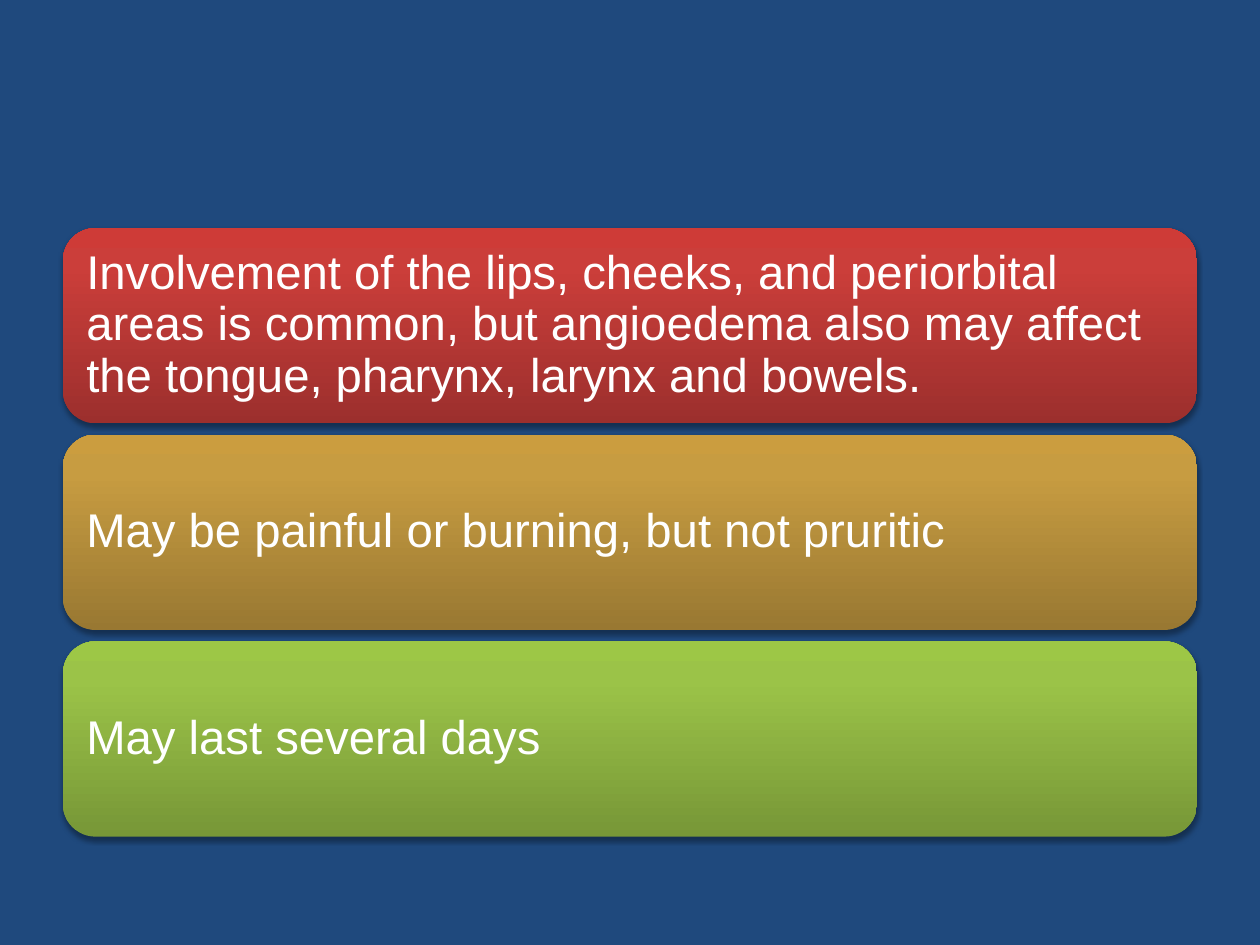
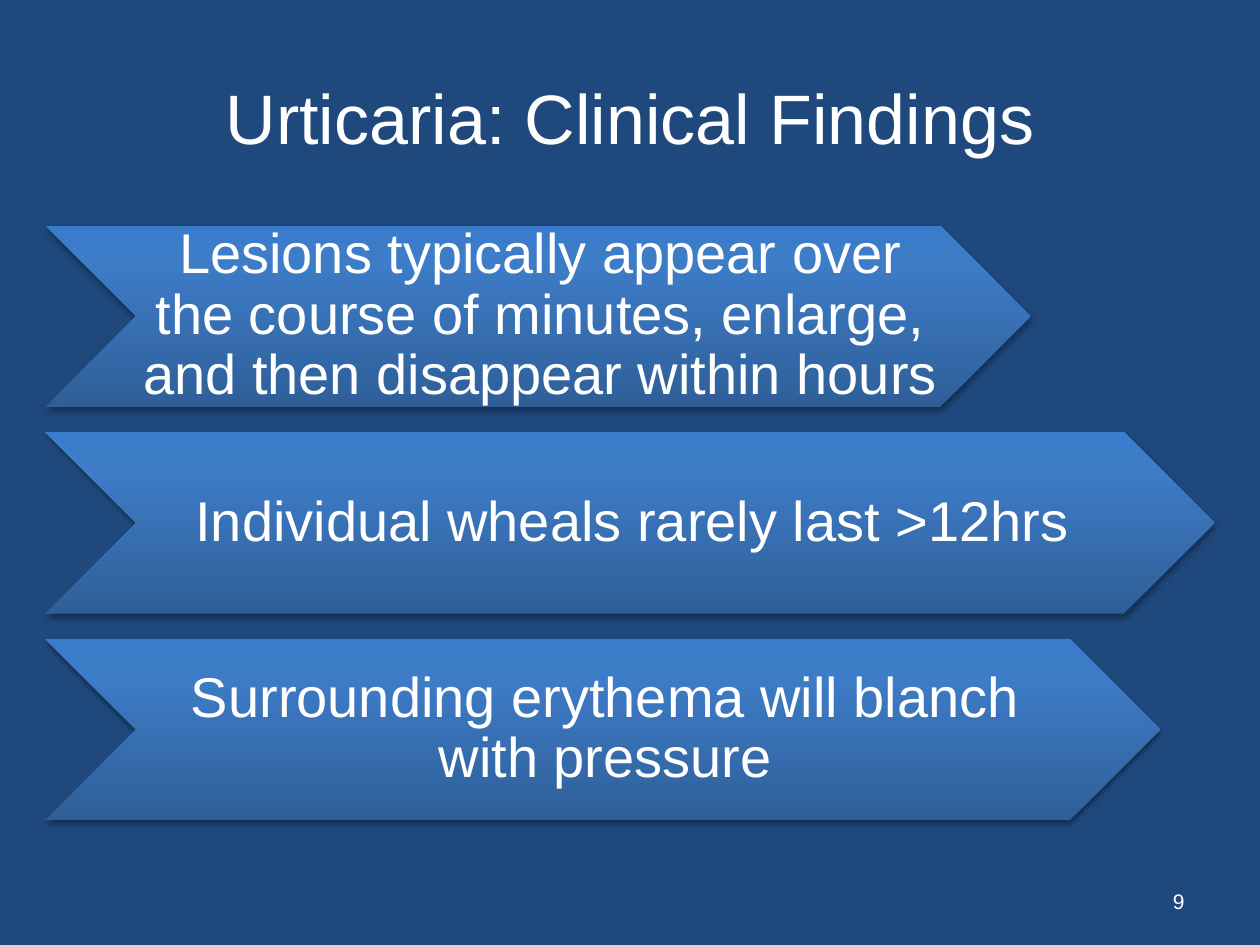
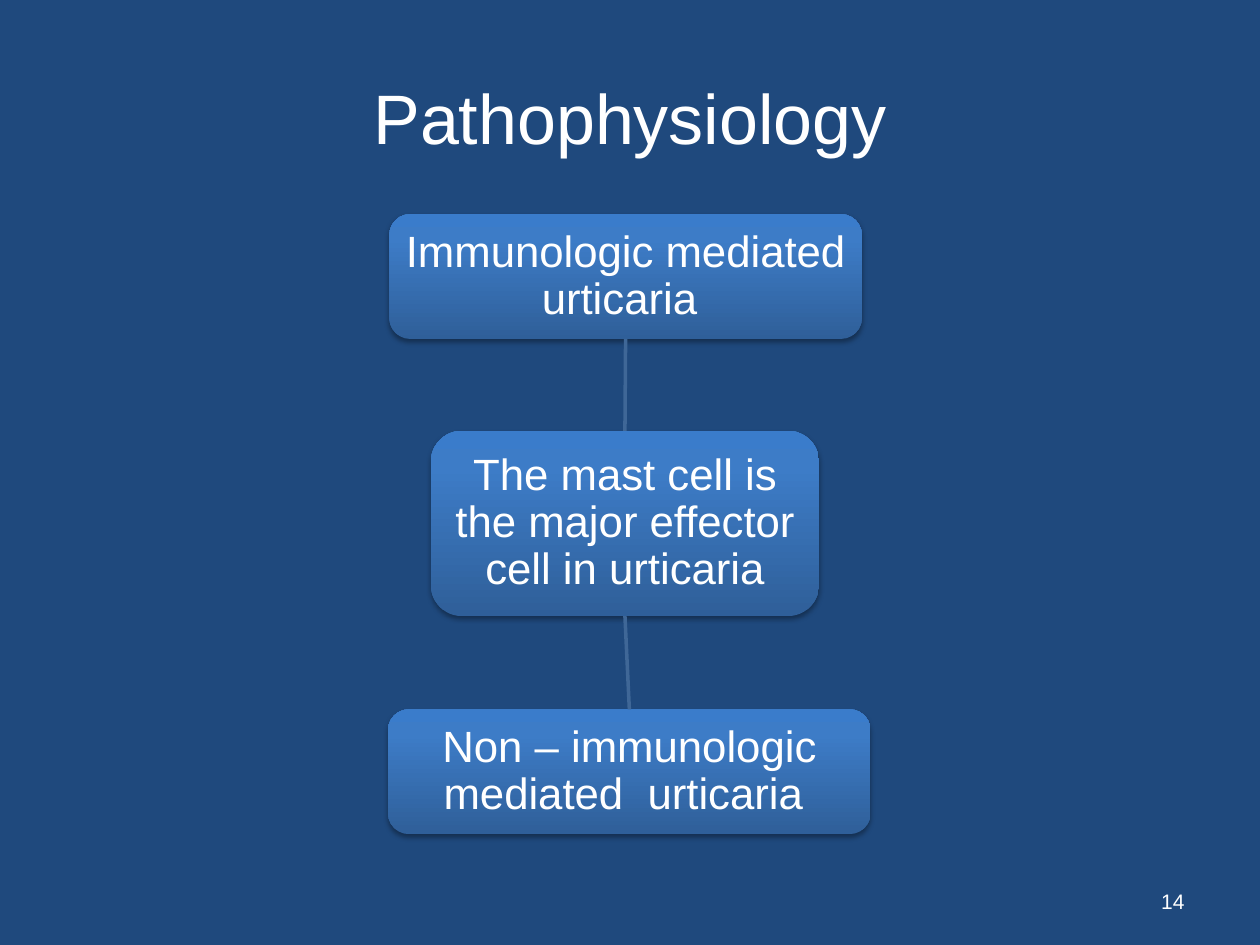
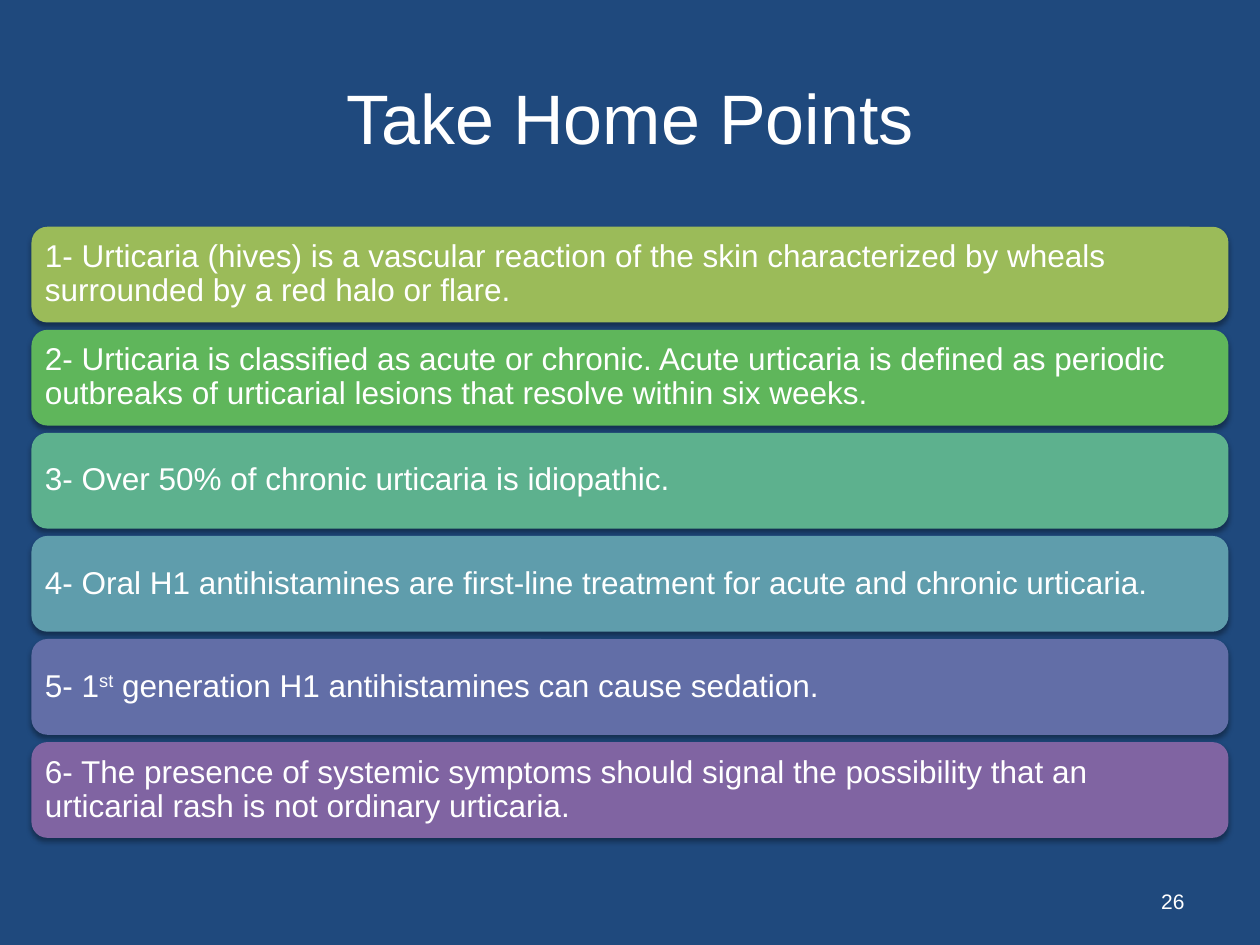
from dataclasses import dataclass

from pptx import Presentation
from pptx.dml.color import RGBColor as RGB
from pptx.enum.shapes import MSO_CONNECTOR as LINE, MSO_SHAPE as SHAPE
from pptx.enum.text import MSO_ANCHOR as ANCHOR, PP_ALIGN as ALIGN
from pptx.oxml import parse_xml
from pptx.oxml.ns import nsdecls, qn
from pptx.util import Inches, Pt


@dataclass(frozen=True)
class Theme:
    font: str = "Arial"
    back: str = "1F497D"
    text: str = "FFFFFF"
    link: str = "3F6797"
    # Gradients run from the bottom edge to the top
    red: tuple = ("9C2F2D", "CB3E3A", "CE3B37")
    gold: tuple = ("997832", "C79C41", "CB9D3F")
    green: tuple = ("779737", "9BC348", "9DC746")
    blue: tuple = ("2F5F99", "3D7CC7", "3A7CCB")
    flat: tuple = ("9BBB59", "5FB65B", "5DB18E", "5F9DAC", "626EA7", "8064A2")
    title: int = 40
    arrow: int = 32
    panel: int = 27
    node: int = 25
    point: int = 18
    num: int = 12


theme = Theme()
prs = Presentation()
prs.slide_width, prs.slide_height = Inches(10), Inches(7.5)

# Grid: 10 columns by 7.5 rows
col, row = prs.slide_width / 10, prs.slide_height / 7.5


def write(frame, text, size, align, space=1.0):
    """Fill a text frame; a part between two ^ marks is superscript."""
    frame.word_wrap = True
    frame.vertical_anchor = ANCHOR.MIDDLE
    para = frame.paragraphs[0]
    para.alignment, para.line_spacing = align, space
    for i, part in enumerate(text.split("^")):
        run = para.add_run()
        run.text = part
        font = run.font
        font.name, font.size = theme.font, Pt(size)
        font.color.rgb = RGB.from_string(theme.text)
        if i % 2:
            run._r.get_or_add_rPr().set("baseline", "30000")


def card(slide, kind, at, fill, text, size, align, pads):
    """Add a shadowed shape with text; a tuple fill is a gradient."""
    x, y, w, h = at
    shape = slide.shapes.add_shape(
        kind, int(x * col), int(y * row), int(w * col), int(h * row))
    shape.line.fill.background()
    shape.shadow.inherit = False
    props = shape._element.spPr
    if isinstance(fill, tuple):
        stops = "".join(
            f'<a:gs pos="{pos}000"><a:srgbClr val="{tone}"/></a:gs>'
            for pos, tone in zip((0, 80, 100), fill))
        props.find(qn("a:ln")).addprevious(parse_xml(
            f'<a:gradFill {nsdecls("a")} rotWithShape="1"><a:gsLst>{stops}'
            '</a:gsLst><a:lin ang="16200000" scaled="0"/></a:gradFill>'))
    else:
        shape.fill.solid()
        shape.fill.fore_color.rgb = RGB.from_string(fill)
    props.find(qn("a:effectLst")).append(parse_xml(
        f'<a:outerShdw {nsdecls("a")} blurRad="{Pt(3.1)}" dist="{Pt(1.8)}" '
        'dir="5400000" rotWithShape="0"><a:srgbClr val="000000">'
        '<a:alpha val="35000"/></a:srgbClr></a:outerShdw>'))
    frame = shape.text_frame
    (frame.margin_left, frame.margin_top,
     frame.margin_right, frame.margin_bottom) = [int(p * col) for p in pads]
    write(frame, text, size, align, 0.9)
    return shape


# Shared background, titles and page numbers
ground = prs.slide_master.background.fill
ground.solid()
ground.fore_color.rgb = RGB.from_string(theme.back)

only, blank = prs.slide_layouts[5], prs.slide_layouts[6]
signs = prs.slides.add_slide(blank)
pages = []
for name, num in (("Urticaria: Clinical Findings", "9"),
                  ("Pathophysiology", "14"),
                  ("Take Home Points", "26")):
    page = prs.slides.add_slide(only)
    head = page.shapes.title
    head.left, head.top = int(0.5 * col), int(0.3 * row)
    head.width, head.height = int(9 * col), int(1.25 * row)
    write(head.text_frame, name, theme.title, ALIGN.CENTER)
    foot = page.shapes.add_textbox(
        int(7.17 * col), int(6.95 * row), int(2.33 * col), int(0.4 * row))
    write(foot.text_frame, num, theme.num, ALIGN.RIGHT)
    pages.append(page)
finds, paths, points = pages

# Slide 1: three panels
panels = (
    (theme.red, "Involvement of the lips, cheeks, and periorbital areas is "
     "common, but angioedema also may affect the tongue, pharynx, larynx "
     "and bowels."),
    (theme.gold, "May be painful or burning, but not pruritic"),
    (theme.green, "May last several days"),
)
for i, (fill, text) in enumerate(panels):
    card(signs, SHAPE.ROUNDED_RECTANGLE, (0.5, 1.81 + i * 1.64, 9, 1.55),
         fill, text, theme.panel, ALIGN.LEFT, (0.11,) * 4)

# Slide 2: chevrons of different lengths
arrows = (
    (7.82, "Lesions typically appear over the course of minutes, enlarge, "
     "and then disappear within hours"),
    (9.28, "Individual wheals rarely last >12hrs"),
    (8.85, "Surrounding erythema will blanch with pressure"),
)
for i, (wide, text) in enumerate(arrows):
    card(finds, SHAPE.CHEVRON, (0.36, 1.79 + i * 1.64, wide, 1.44),
         theme.blue, text, theme.arrow, ALIGN.CENTER, (0.04, 0.02, 0, 0.02))

# Slide 3: the mast cell joined to both kinds of urticaria
nodes = (
    ((3.42, 3.42, 3.08, 1.47),
     "The mast cell is the major effector cell in urticaria"),
    ((3.09, 1.7, 3.75, 0.99), "Immunologic mediated urticaria "),
    ((3.08, 5.63, 3.83, 0.99), "Non – immunologic mediated  urticaria "),
)
core, above, below = [
    card(paths, SHAPE.ROUNDED_RECTANGLE, at, theme.blue, text, theme.node,
         ALIGN.CENTER, (0.07,) * 4) for at, text in nodes]
for side, node, end in ((0, above, 2), (2, below, 0)):
    link = paths.shapes.add_connector(LINE.STRAIGHT, 0, 0, 0, 0)
    link.begin_connect(core, side)
    link.end_connect(node, end)
    link.line.color.rgb = RGB.from_string(theme.link)
    link.line.width = Pt(2)
    link._element.spPr.append(parse_xml(f'<a:effectLst {nsdecls("a")}/>'))

# Slide 4: numbered points
notes = (
    "Urticaria (hives) is a vascular reaction of the skin characterized by "
    "wheals surrounded by a red halo or flare.",
    "Urticaria is classified as acute or chronic. Acute urticaria is defined "
    "as periodic outbreaks of urticarial lesions that resolve within six "
    "weeks.",
    "Over 50% of chronic urticaria is idiopathic.",
    "Oral H1 antihistamines are first-line treatment for acute and chronic "
    "urticaria.",
    "1^st^ generation H1 antihistamines can cause sedation.",
    "The presence of systemic symptoms should signal the possibility that an "
    "urticarial rash is not ordinary urticaria.",
)
step = (5.89 - 1.8) / (len(notes) - 1)
for i, (fill, text) in enumerate(zip(theme.flat, notes)):
    card(points, SHAPE.ROUNDED_RECTANGLE, (0.25, 1.8 + i * step, 9.5, 0.76),
         fill, f"{i + 1}- {text}", theme.point, ALIGN.LEFT, (0.07,) * 4)

prs.save("out.pptx")
